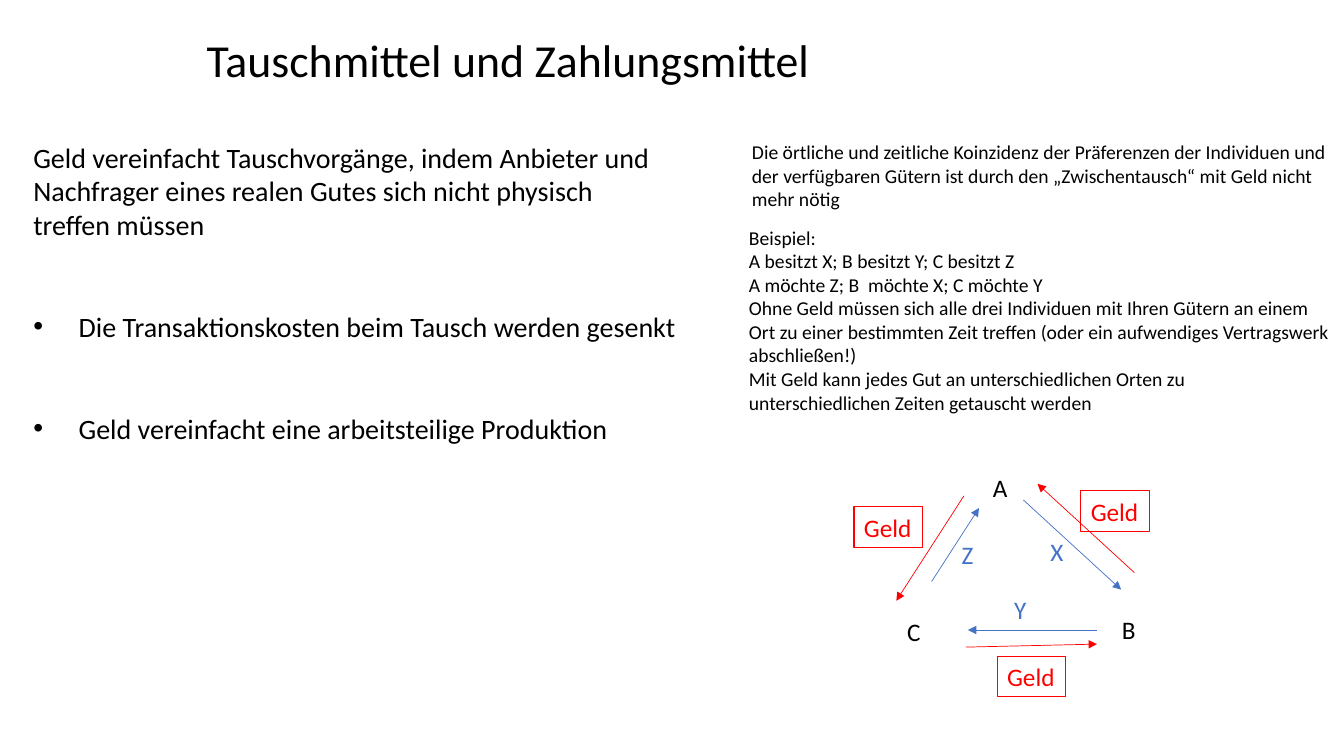
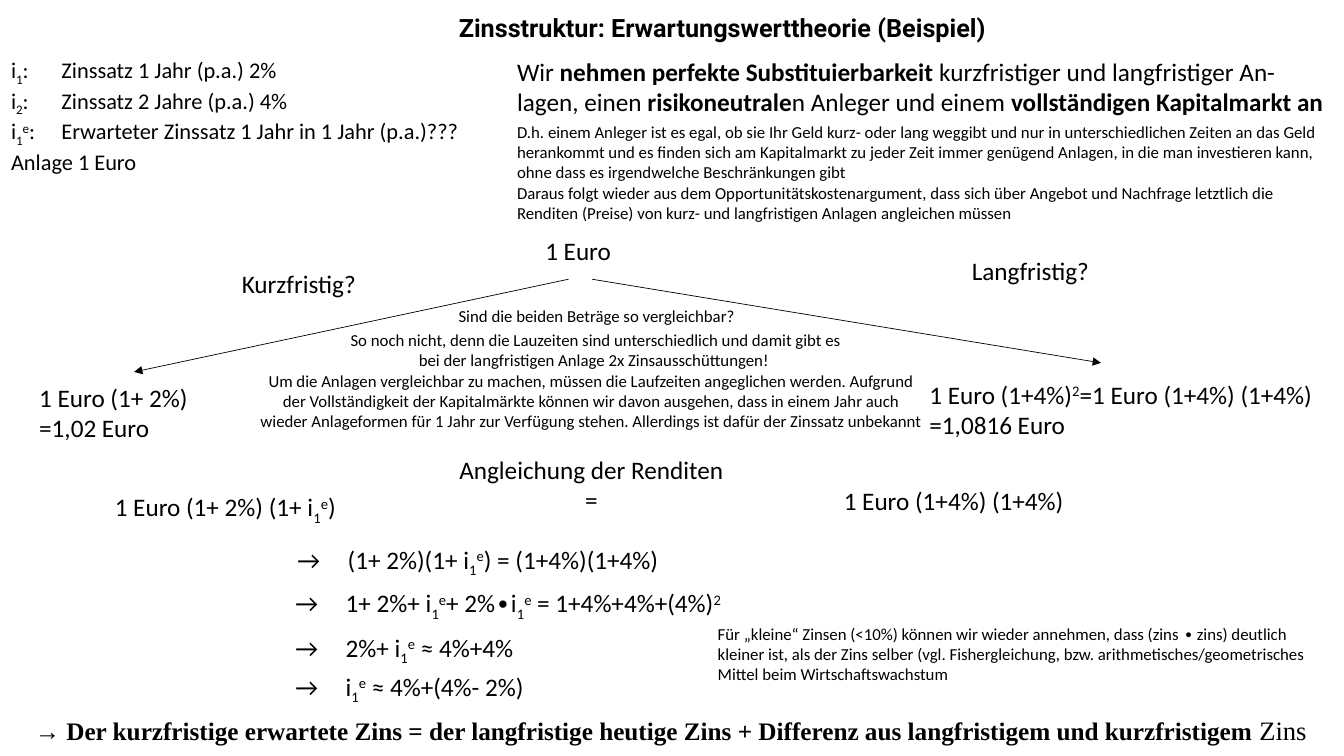
from lxml import etree
from pptx import Presentation
from pptx.dml.color import RGBColor
from pptx.enum.shapes import MSO_CONNECTOR as Connector, MSO_SHAPE as Preset
from pptx.enum.text import MSO_ANCHOR as Anchor, MSO_AUTO_SIZE as AutoSize, PP_ALIGN as Align
from pptx.oxml.ns import qn
from pptx.util import Inches, Pt

COLORS = {"text": "000000", "goods": "4472C4", "money": "FF0000"}
FONT = "Calibri"
BASELINES = {"_": "-25000", "^": "30000"}


def color(name):
    return RGBColor.from_string(COLORS[name])


def write_runs(paragraph, markup):
    """Write markup as runs: _x lowers x, ^x raises x, * switches bold."""
    bold, baseline, pending = False, None, ""

    def flush(text):
        if text:
            run = paragraph.add_run()
            run.text = text
            run.font.bold = bold
            if baseline:
                run.font._element.set("baseline", baseline)

    for character in markup:
        if baseline:
            flush(character)
            baseline = None
        elif character in BASELINES:
            flush(pending)
            pending, baseline = "", BASELINES[character]
        elif character == "*":
            flush(pending)
            pending, bold = "", not bold
        else:
            pending += character
    flush(pending)


def fill_frame(frame, lines, size=18, ink="text", align=Align.LEFT, wrap=True, font=FONT):
    frame.word_wrap = wrap
    frame.vertical_anchor = Anchor.TOP
    frame.margin_left = frame.margin_right = Inches(0.1)
    frame.margin_top = frame.margin_bottom = Inches(0.05)
    for index, line in enumerate(lines):
        paragraph = frame.add_paragraph() if index else frame.paragraphs[0]
        write_runs(paragraph, line)
        paragraph.alignment = align
        paragraph.space_before = Pt(0)
        for run in paragraph.runs:
            run.font.name = font
            run.font.size = Pt(size)
            run.font.color.rgb = color(ink)
    frame.auto_size = AutoSize.SHAPE_TO_FIT_TEXT


def place(shape, box):
    shape.left, shape.top, shape.width, shape.height = map(Inches, box)


def add_text(slide, box, lines, **style):
    text_box = slide.shapes.add_textbox(*map(Inches, box))
    fill_frame(text_box.text_frame, lines, **style)
    return text_box


def add_arrow(slide, start, end, ink):
    arrow = slide.shapes.add_connector(Connector.STRAIGHT, *map(Inches, (*start, *end)))
    arrow.line.color.rgb = color(ink)
    arrow.line.width = Pt(0.5)
    etree.SubElement(arrow.line._get_or_add_ln(), qn("a:tailEnd"), type="triangle")
    etree.SubElement(arrow._element.spPr, qn("a:effectLst"))


def set_bullet(paragraph, character=None, indent=0):
    properties = paragraph._p.get_or_add_pPr()
    properties.set("marL", str(Inches(indent)))
    properties.set("indent", str(-Inches(indent)))
    if character:
        etree.SubElement(properties, qn("a:buChar"), char=character)
    else:
        etree.SubElement(properties, qn("a:buNone"))


def add_title(slide, box, title, **style):
    shape = slide.shapes.title
    place(shape, box)
    fill_frame(shape.text_frame, [title], **style)
    return shape


def add_body(slide, box, lines, bullets=(), **style):
    """Fill the body placeholder; bullets follow the plain lines."""
    body = slide.placeholders[1]
    place(body, box)
    fill_frame(body.text_frame, [*lines, *bullets], **style)
    for index, paragraph in enumerate(body.text_frame.paragraphs):
        if index < len(lines):
            set_bullet(paragraph)
        else:
            paragraph.space_before = Pt(48.8)
            set_bullet(paragraph, "•", 0.45)


def add_example(slide, left, top):
    width = 5.97
    add_text(slide, (left + 0.03, top, width, 0.81), [
        "Die örtliche und zeitliche Koinzidenz der Präferenzen der Individuen und der "
        "verfügbaren Gütern ist durch den „Zwischentausch“ mit Geld nicht mehr nötig"], size=14)
    add_text(slide, (left, top + 0.85, width, 1.99), [
        "Beispiel:",
        "A besitzt X; B besitzt Y; C besitzt Z",
        "A möchte Z; B  möchte X; C möchte Y",
        "Ohne Geld müssen sich alle drei Individuen mit Ihren Gütern an einem Ort zu einer "
        "bestimmten Zeit treffen (oder ein aufwendiges Vertragswerk abschließen!)",
        "Mit Geld kann jedes Gut an unterschiedlichen Orten zu unterschiedlichen Zeiten "
        "getauscht werden"], size=14)


def add_exchange_triangle(slide, left, top):
    """Goods circulate between A, B and C while money flows the other way."""
    def at(point):
        return left + point[0], top + point[1]

    letters = [("A", "text", (1.28, 0)), ("B", "text", (2.56, 1.41)), ("C", "text", (0.43, 1.43)),
               ("X", "goods", (1.85, 0.63)), ("Y", "goods", (1.49, 1.21)),
               ("Z", "goods", (0.97, 0.66))]
    for letter, ink, point in letters:
        add_text(slide, (*at(point), 0.34, 0.4), [letter], ink=ink, wrap=False)

    flows = [("goods", (1.68, 0.32), (2.65, 1.21)), ("goods", (2.41, 1.61), (1.13, 1.61)),
             ("goods", (0.77, 1.13), (1.24, 0.4)), ("money", (2.78, 1.04), (1.82, 0.16)),
             ("money", (1.09, 0.28), (0.42, 1.32)), ("money", (1.11, 1.78), (2.41, 1.75))]
    for ink, start, end in flows:
        add_arrow(slide, at(start), at(end), ink)

    for point in [(2.25, 0.23), (0, 0.39), (1.42, 1.87)]:
        money = slide.shapes.add_shape(Preset.RECTANGLE, *map(Inches, (*at(point), 0.68, 0.4)))
        money.shadow.inherit = False
        money.fill.background()
        money.line.color.rgb = color("money")
        money.line.width = Pt(0.75)
        fill_frame(money.text_frame, ["Geld"], ink="money", wrap=False)


def add_assumptions(slide, left, top):
    width = 8.3
    add_text(slide, (left, top, width, 0.71), [
        "Wir *nehmen perfekte Substituierbarkeit *kurzfristiger und langfristiger An- lagen, "
        "einen *risikoneutrale*n Anleger und einem *vollständigen Kapitalmarkt an*"])
    add_text(slide, (left, top + 0.65, width, 0.71), [
        "D.h. einem Anleger ist es egal, ob sie Ihr Geld kurz- oder lang weggibt und nur in "
        "unterschiedlichen Zeiten an das Geld herankommt und es finden sich am Kapitalmarkt zu "
        "jeder Zeit immer genügend Anlagen, in die man investieren kann, ohne dass es "
        "irgendwelche Beschränkungen gibt"], size=12)
    add_text(slide, (left, top + 1.25, width, 0.5), [
        "Daraus folgt wieder aus dem Opportunitätskostenargument, dass sich über Angebot und "
        "Nachfrage letztlich die Renditen (Preise) von kurz- und langfristigen Anlagen "
        "angleichen müssen"], size=12)


def add_decision(slide, left, top):
    """Fork from one euro to the short-term and the long-term investment."""
    start_y = top + 0.48
    add_arrow(slide, (left + 5.35, start_y), (left + 1.04, top + 1.4), "text")
    add_arrow(slide, (left + 5.58, start_y), (left + 10.63, top + 1.31), "text")
    labels = [((5.02, 0, 0.86, 0.4), ["1 Euro"]),
              ((2.01, 0.32, 1.35, 0.4), ["Kurzfristig?"]),
              ((9.25, 0.19, 1.38, 0.4), ["Langfristig?"]),
              ((0, 1.45, 1.69, 0.71), ["1 Euro (1+ 2%)", "=1,02 Euro"]),
              ((8.83, 1.42, 4.06, 0.71), ["1 Euro (1+4%)^2=1 Euro (1+4%) (1+4%)", "=1,0816 Euro"])]
    for (x, y, width, height), lines in labels:
        add_text(slide, (left + x, top + y, width, height), lines, wrap=False)

    remarks = [((4.16, 0.69, 3.1, 0.3), Align.LEFT, "Sind die beiden Beträge so vergleichbar?"),
               ((3.05, 0.93, 5.14, 0.5), Align.CENTER,
                "So noch nicht, denn die Lauzeiten sind unterschiedlich und damit gibt es bei der "
                "langfristigen Anlage 2x Zinsausschüttungen! "),
               ((2.18, 1.34, 6.79, 0.71), Align.CENTER,
                "Um die Anlagen vergleichbar zu machen, müssen die Laufzeiten angeglichen werden. "
                "Aufgrund der Vollständigkeit der Kapitalmärkte können wir davon ausgehen, dass in "
                "einem Jahr auch wieder Anlageformen für 1 Jahr zur Verfügung stehen. Allerdings "
                "ist dafür der Zinssatz unbekannt")]
    for (x, y, width, height), align, remark in remarks:
        add_text(slide, (left + x, top + y, width, height), [remark], size=12, align=align)


def add_equalization(slide, left, top):
    add_text(slide, (left, top + 0.37, 2.45, 0.4), ["1 Euro (1+ 2%) (1+ i_1^e)"], wrap=False)
    add_text(slide, (left + 3.4, top, 2.85, 0.71), ["Angleichung der Renditen", "="],
             align=Align.CENTER, wrap=False)
    add_text(slide, (left + 7.23, top + 0.31, 2.41, 0.4), ["1 Euro (1+4%) (1+4%)"], wrap=False)

    steps = [(1.81, 0.89, "(1+ 2%)(1+ i_1^e) = (1+4%)(1+4%)"),
             (1.79, 1.32, "1+ 2%+ i_1^e+ 2%∙i_1^e = 1+4%+4%+(4%)^2"),
             (1.79, 1.76, "2%+ i_1^e ≈ 4%+4%"),
             (1.79, 2.15, "i_1^e ≈ 4%+(4%- 2%)")]
    for x, y, equation in steps:
        add_text(slide, (left + x, top + y, 4.95, 0.4), [f"→\t{equation}"])

    add_text(slide, (left + 5.98, top + 1.68, 6.31, 0.71), [
        "Für „kleine“ Zinsen (<10%) können wir wieder annehmen, dass (zins ∙ zins) deutlich "
        "kleiner ist, als der Zins selber (vgl. Fishergleichung, bzw. "
        "arithmetisches/geometrisches Mittel beim Wirtschaftswachstum"], size=12)


def add_conclusion(slide, box):
    conclusion = add_text(slide, box, [
        "→ *Der kurzfristige erwartete Zins = der langfristige heutige Zins + Differenz aus "
        "langfristigem und kurzfristigem **""*Zins *"], align=Align.CENTER, font="Times New Roman")
    conclusion.text_frame.paragraphs[0].runs[-1].font.size = Pt(19)


def build_exchange_slide(presentation):
    slide = presentation.slides.add_slide(presentation.slide_layouts[1])
    add_title(slide, (1.95, 0.26, 6.22, 0.65), "Tauschmittel und Zahlungsmittel",
              size=32.7, wrap=False)
    add_body(slide, (0.23, 1.34, 6.6, 3.2),
             ["Geld vereinfacht Tauschvorgänge, indem Anbieter und",
              "Nachfrager eines realen Gutes sich nicht physisch",
              "treffen müssen"],
             bullets=["Die Transaktionskosten beim Tausch werden gesenkt",
                      "Geld vereinfacht eine arbeitsteilige Produktion"], size=20)
    add_example(slide, 7.33, 1.34)
    add_exchange_triangle(slide, 8.47, 4.64)


def build_interest_slide(presentation):
    slide = presentation.slides.add_slide(presentation.slide_layouts[1])
    title = add_title(slide, (4.45, 0.07, 6.69, 0.41),
                      "*Zinsstruktur: Erwartungswerttheorie (Beispiel)*", font="Roboto")
    title.text_frame.vertical_anchor = Anchor.MIDDLE
    add_body(slide, (0.01, 0.51, 5.69, 1.18),
             ["i_1:\tZinssatz 1 Jahr (p.a.) 2%",
              "i_2:\tZinssatz 2 Jahre (p.a.) 4%",
              "i_1^e:\tErwarteter Zinssatz 1 Jahr in 1 Jahr (p.a.)???",
              "Anlage 1 Euro"], size=16)
    add_assumptions(slide, 5.03, 0.51)
    add_decision(slide, 0.29, 2.29)
    add_equalization(slide, 1.04, 4.46)
    add_conclusion(slide, (0.02, 7.03, 13.33, 0.44))


def main():
    presentation = Presentation()
    presentation.slide_width = Inches(13.33)
    presentation.slide_height = Inches(7.5)
    build_exchange_slide(presentation)
    build_interest_slide(presentation)
    presentation.save("out.pptx")


if __name__ == "__main__":
    main()
